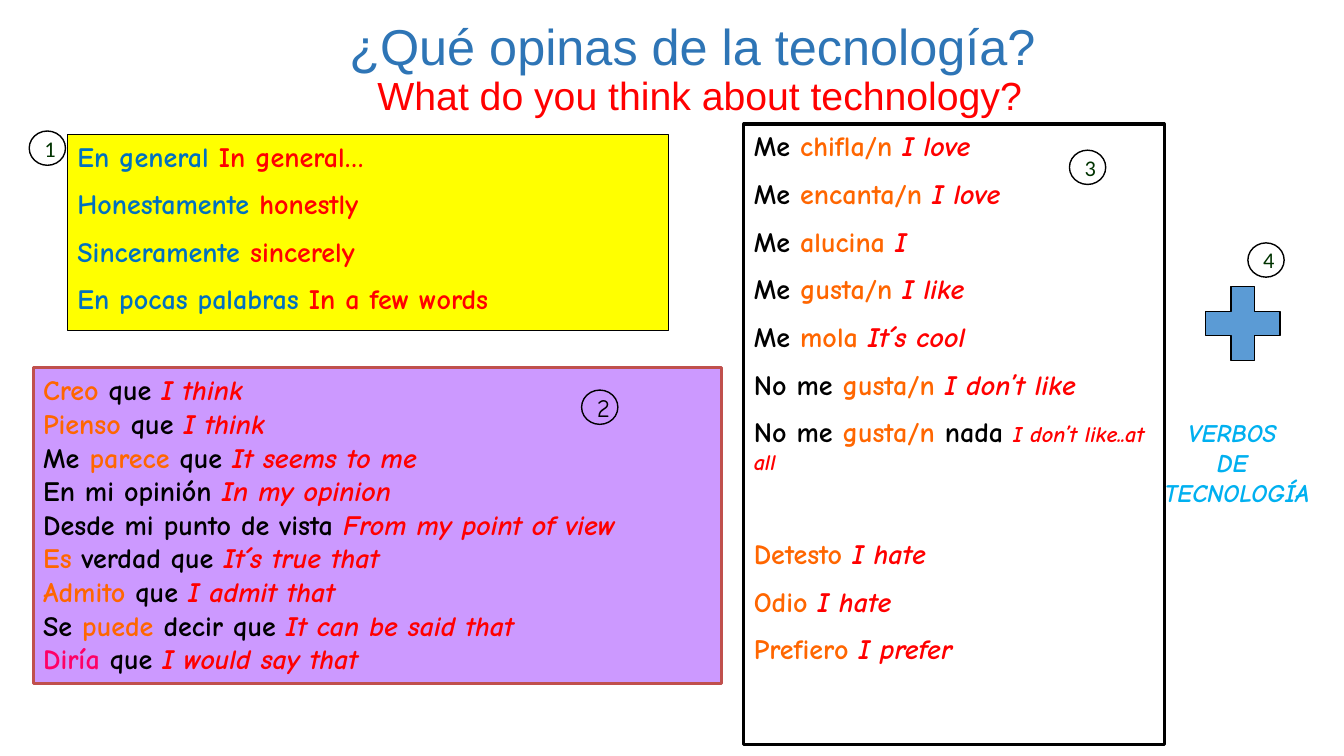
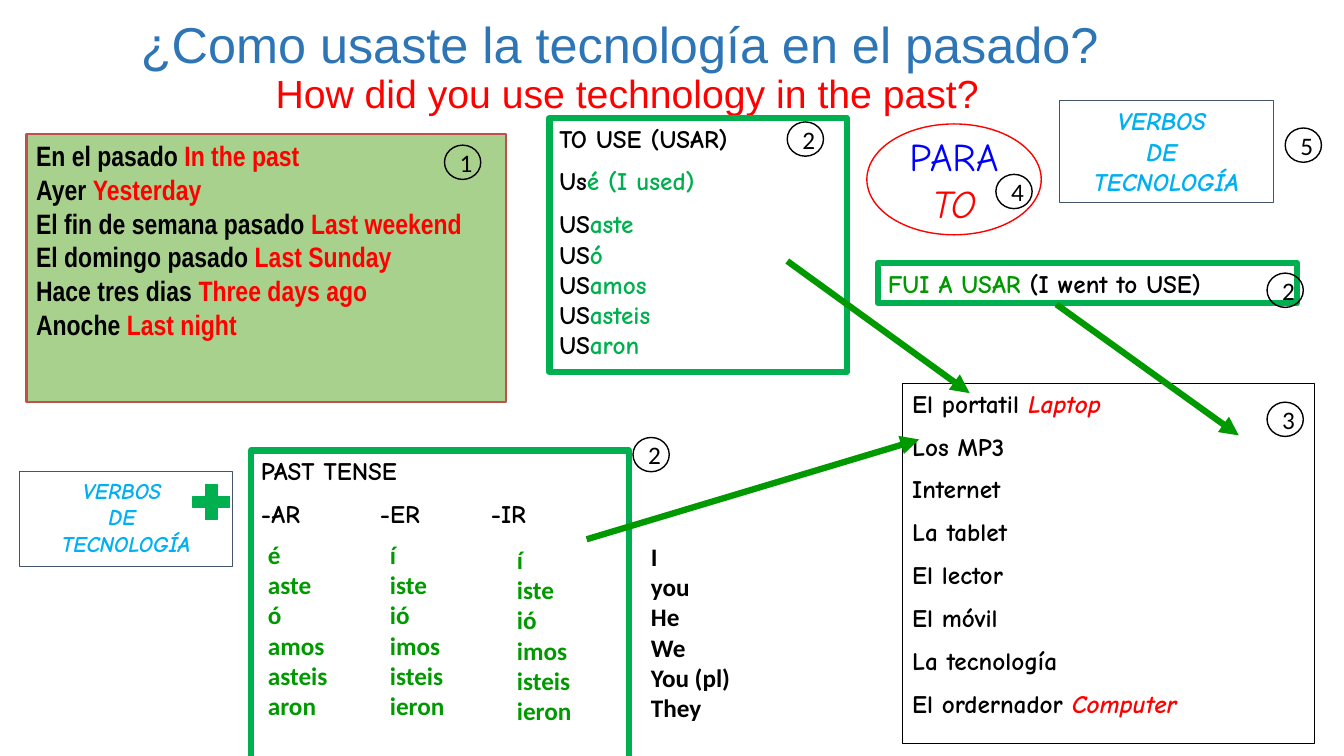
"""Build two Spanish and English slides about opinions on technology."""
from dataclasses import dataclass, field
from typing import NamedTuple

from lxml.etree import SubElement
from pptx import Presentation
from pptx.dml.color import RGBColor
from pptx.enum.shapes import MSO_CONNECTOR, MSO_SHAPE
from pptx.enum.text import MSO_ANCHOR, MSO_AUTO_SIZE, PP_ALIGN
from pptx.oxml.ns import qn
from pptx.util import Inches, Pt

COLS, ROWS = 133.33, 75
COMIC, SANS, NARROW, PLAIN = "Comic Neue", "Arial", "Arial Narrow", "Calibri"
INK = {
    "k": "000000", "r": "FF0000", "i": "FF0000", "o": "FF6600",
    "p": "FF0066", "b": "0070C0", "s": "00B0F0", "g": "00B050",
    "v": "009900", "n": "0000FF", "d": "003300", "title": "2E75B6",
    "white": "FFFFFF", "yellow": "FFFF00", "lilac": "CC99FF",
    "sage": "A9D18E", "brick": "C0504D", "slate": "44546A", "steel": "5B9BD5",
}
SLANT = "is"


class Box(NamedTuple):
    x: float
    y: float
    w: float
    h: float


@dataclass
class Panel:
    box: Box
    lines: list[str] = field(default_factory=list)
    fill: str = ""
    line: str = ""
    width: float = 0.75
    size: float = 18
    face: str = COMIC
    bold: bool = True
    gap: float = 0
    gaps: dict[int, float] = field(default_factory=dict)
    tabs: tuple[float, ...] = ()
    mid: bool = False
    kind: MSO_SHAPE = MSO_SHAPE.RECTANGLE
    small: str = ""


class Arrow(NamedTuple):
    x: float
    y: float
    to_x: float
    to_y: float


@dataclass
class Page:
    box: Box
    title: str
    sub: str
    panels: list[Panel]
    arrows: list[Arrow] = field(default_factory=list)


def cell(count: float) -> int:
    """Turn grid cells into a length."""
    return Inches(count / 10)


def tint(name: str) -> RGBColor:
    """Look up a colour."""
    return RGBColor.from_string(INK[name])


def badge(x: float, y: float, num: int, size: float = 18,
          face: str = PLAIN, ink: str = "k") -> Panel:
    """Make a numbered circle."""
    return Panel(Box(x, y, 3.6, 3.4), [f"{ink}:{num}"], line="k", width=1,
                 size=size, face=face, bold=False, mid=True,
                 kind=MSO_SHAPE.OVAL)


def verbs(box: Box, line: str = "", size: float = 18) -> Panel:
    """Make a reminder of the technology verbs."""
    words = ["s:VERBOS ", "s:DE ", "s:TECNOLOGÍA"]
    return Panel(box, words, line=line, size=size, mid=True)


def forms(x: float, y: float, words: str, ink: str = "v") -> Panel:
    """Make a column of verb endings or pronouns."""
    lines = [f"{ink}:{word}" for word in words.split(",")]
    return Panel(Box(x, y, 10.4, 19.2), lines, face=PLAIN)


def write(shape, panel: Panel) -> None:
    """Set the coloured lines of a panel."""
    frame = shape.text_frame
    frame.word_wrap = True
    frame.auto_size = MSO_AUTO_SIZE.NONE
    middle = panel.kind == MSO_SHAPE.OVAL
    frame.vertical_anchor = MSO_ANCHOR.MIDDLE if middle else MSO_ANCHOR.TOP
    for row, line in enumerate(panel.lines):
        para = frame.add_paragraph() if row else frame.paragraphs[0]
        para.alignment = PP_ALIGN.CENTER if panel.mid else PP_ALIGN.LEFT
        para.space_before = Pt(panel.gaps.get(row, panel.gap))
        para.font.name = panel.face
        para.font.size = Pt(panel.size)
        para.font.bold = panel.bold
        if panel.tabs and "\t" in line:
            props = para._p.get_or_add_pPr()
            stops = props.makeelement(qn("a:tabLst"))
            props.find(qn("a:defRPr")).addprevious(stops)
            for stop in panel.tabs:
                SubElement(stops, qn("a:tab"), pos=str(cell(stop)), algn="l")
        for part in line.split("|"):
            ink, text = part.split(":", 1)
            run = para.add_run()
            run.text = text
            run.font.color.rgb = tint(ink)
            run.font.italic = ink in SLANT
            if text == panel.small:
                run.font.size = Pt(16)


def draw(slide, panel: Panel) -> None:
    """Draw a panel as a shape or a text box."""
    spot = [cell(size) for size in panel.box]
    if not panel.fill and not panel.line:
        write(slide.shapes.add_textbox(*spot), panel)
        return
    shape = slide.shapes.add_shape(panel.kind, *spot)
    shape.shadow.inherit = False
    if panel.fill:
        shape.fill.solid()
        shape.fill.fore_color.rgb = tint(panel.fill)
    else:
        shape.fill.background()
    shape.line.color.rgb = tint(panel.line)
    shape.line.width = Pt(panel.width)
    if panel.lines:
        write(shape, panel)


def point(slide, arrow: Arrow) -> None:
    """Draw a green arrow."""
    link = slide.shapes.add_connector(MSO_CONNECTOR.STRAIGHT, *map(cell, arrow))
    link.line.color.rgb = tint("v")
    link.line.width = Pt(4.5)
    SubElement(link.line._get_or_add_ln(), qn("a:tailEnd"), type="triangle")
    SubElement(link._element.spPr, qn("a:effectLst"))


def head(slide, page: Page) -> None:
    """Set the two-line title."""
    shape = slide.shapes.title
    shape.left, shape.top, shape.width, shape.height = map(cell, page.box)
    frame = shape.text_frame
    frame.word_wrap = True
    frame.auto_size = MSO_AUTO_SIZE.NONE
    frame.vertical_anchor = MSO_ANCHOR.BOTTOM
    para = frame.paragraphs[0]
    para.alignment = PP_ALIGN.CENTER
    para.line_spacing = 0.9
    para.font.name = SANS
    for text, size, ink in ((page.title, 36, "title"), (page.sub, 28, "r")):
        if para.runs:
            para.add_line_break()
        run = para.add_run()
        run.text = text
        run.font.size = Pt(size)
        run.font.color.rgb = tint(ink)


OPINION = Page(
    Box(24.4, 2.8, 90, 9.5),
    "¿Qué opinas de la tecnología? ", "What do you think about technology?",
    [
        Panel(Box(73.8, 12.3, 41.7, 61.6), [
            "k:Me |o:chifla/n |i:I love",
            "k:Me |o:encanta/n |i:I love",
            "k:Me |o:alucina |i:I",
            "k:Me |o:gusta/n |i:I like",
            "k:Me |o:mola |i:It´s cool",
            "k:No me |o:gusta/n |i:I don’t like",
            "k:No me |o:gusta/n |k:nada |i:I don’t like..at all",
            "o:Detesto |i:I hate",
            "o:Odio |i:I hate",
            "o:Prefiero |i:I prefer",
        ], line="k", width=2.25, size=20, gap=10, gaps={7: 44},
            small="I don’t like..at all"),
        Panel(Box(118.3, 27.1, 10, 10), fill="steel", line="k", width=1,
              kind=MSO_SHAPE.MATH_PLUS),
        verbs(Box(112.1, 40.9, 21.2, 10.1)),
        Panel(Box(3.3, 36.5, 68.3, 31.3), [
            "o:Creo|k: que |i:I think",
            "o:Pienso|k: que |i:I think",
            "k:Me |o:parece|k: que |i:It seems to me",
            "k:En mi opinión |i:In my opinion",
            "k:Desde mi punto de vista |i:From my point of view",
            "o:Es|k: verdad que |i:It´s true that",
            "o:Admito|k: que |i:I admit that",
            "k:Se |o:puede|k: decir que |i:It can be said that",
            "p:Diría|k: que |i:I would say that",
        ], fill="lilac", line="brick", width=2, size=20),
        Panel(Box(6.7, 13.3, 59.6, 19.5), [
            "b:En general |r:In general…",
            "b:Honestamente |r:honestly",
            "b:Sinceramente |r:sincerely",
            "b:En pocas palabras |r:In a few words",
        ], fill="yellow", line="k", size=20, gap=10),
        badge(57.7, 38.7, 2, face=COMIC),
        *(badge(x, y, num, 16, ink="d") for x, y, num in (
            (2.9, 13, 1), (106.1, 14.9, 3), (123.8, 24.1, 4))),
    ],
)

PAST = Page(
    Box(2.7, 2.6, 119, 9.5),
    "¿Como usaste la tecnología en el pasado? ",
    "How did you use technology in the past?",
    [
        Panel(Box(89.5, 38, 40.9, 35.8), [
            "k:El portatil |i:Laptop", "k:Los MP3", "k:Internet",
            "k:La tablet", "k:El lector", "k:El móvil", "k:La tecnología",
            "k:El ordernador |i:Computer",
        ], line="k", gap=9),
        Panel(Box(24.9, 44.7, 37.5, 31.3),
              ["k:PAST TENSE", "k:-AR\t-ER\t-IR"],
              line="g", width=4.5, gap=9, tabs=(11.8, 22.8)),
        Panel(Box(86, 12.3, 17.3, 11), ["n:PARA", "i:TO"], fill="white",
              line="r", width=1, size=28, bold=False, mid=True,
              kind=MSO_SHAPE.OVAL),
        verbs(Box(105.1, 10, 21.2, 10.1), "slate"),
        Panel(Box(2.6, 13.3, 47.6, 26.6), [
            "k:En el pasado |r:In the past",
            "k:Ayer |r:Yesterday",
            "k:El fin de semana pasado |r:Last weekend",
            "k:El domingo pasado |r:Last Sunday",
            "k:Hace tres dias |r:Three days ago",
            "k:Anoche|r: Last night",
        ], fill="sage", line="brick", width=2, size=20, face=NARROW),
        forms(25.6, 53, "é,aste,ó,amos,asteis,aron"),
        *(forms(x, y, "í,iste,ió,imos,isteis,ieron")
          for x, y in ((37.7, 53), (50.3, 53.5))),
        Panel(Box(18.5, 47.4, 4.9, 4.8), fill="g", line="g", width=1,
              kind=MSO_SHAPE.MATH_PLUS),
        forms(63.6, 53.2, "I,you,He,We,You (pl),They", "k"),
        Panel(Box(54.5, 11.7, 29.5, 25.2), [
            "k:TO USE (USAR)", "k:Us|g:é (I used)",
            *(f"k:US|g:{end}" for end in ("aste", "ó", "amos", "asteis", "aron")),
        ], line="g", width=4.5, gap=9, gaps=dict.fromkeys(range(3, 7), 0)),
        verbs(Box(1.9, 46.8, 21.2, 9.4), "slate", 16),
        Panel(Box(87.1, 26.1, 41.6, 4), ["v:FUI A USAR |k:(I went to USE)"],
              line="g", width=4.5, gap=9),
        *(badge(x, y, num) for x, y, num in (
            (44.1, 14.4, 1), (62.8, 43.4, 2), (78.1, 12.1, 2),
            (125.7, 27.1, 2), (125.7, 39.9, 3), (98.8, 17.3, 4),
            (127.5, 12.7, 5))),
    ],
    [Arrow(78.1, 25.9, 96.2, 39), Arrow(58.2, 53.5, 91.2, 43.6),
     Arrow(104.8, 30.2, 122.9, 43.2)],
)


def main() -> None:
    """Build and save the slides."""
    deck = Presentation()
    deck.slide_width, deck.slide_height = cell(COLS), cell(ROWS)
    for page in (OPINION, PAST):
        slide = deck.slides.add_slide(deck.slide_layouts[5])
        head(slide, page)
        for panel in page.panels:
            draw(slide, panel)
        for arrow in page.arrows:
            point(slide, arrow)
    deck.save("out.pptx")


if __name__ == "__main__":
    main()
